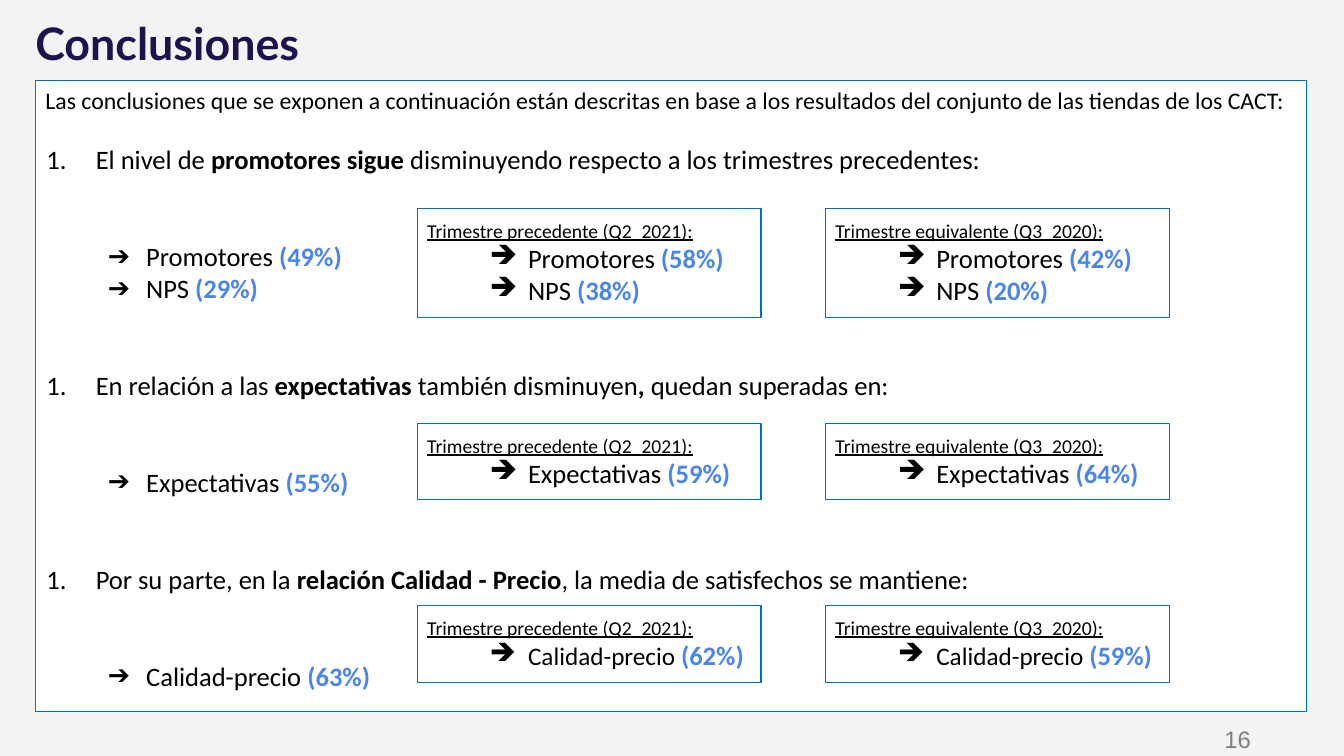
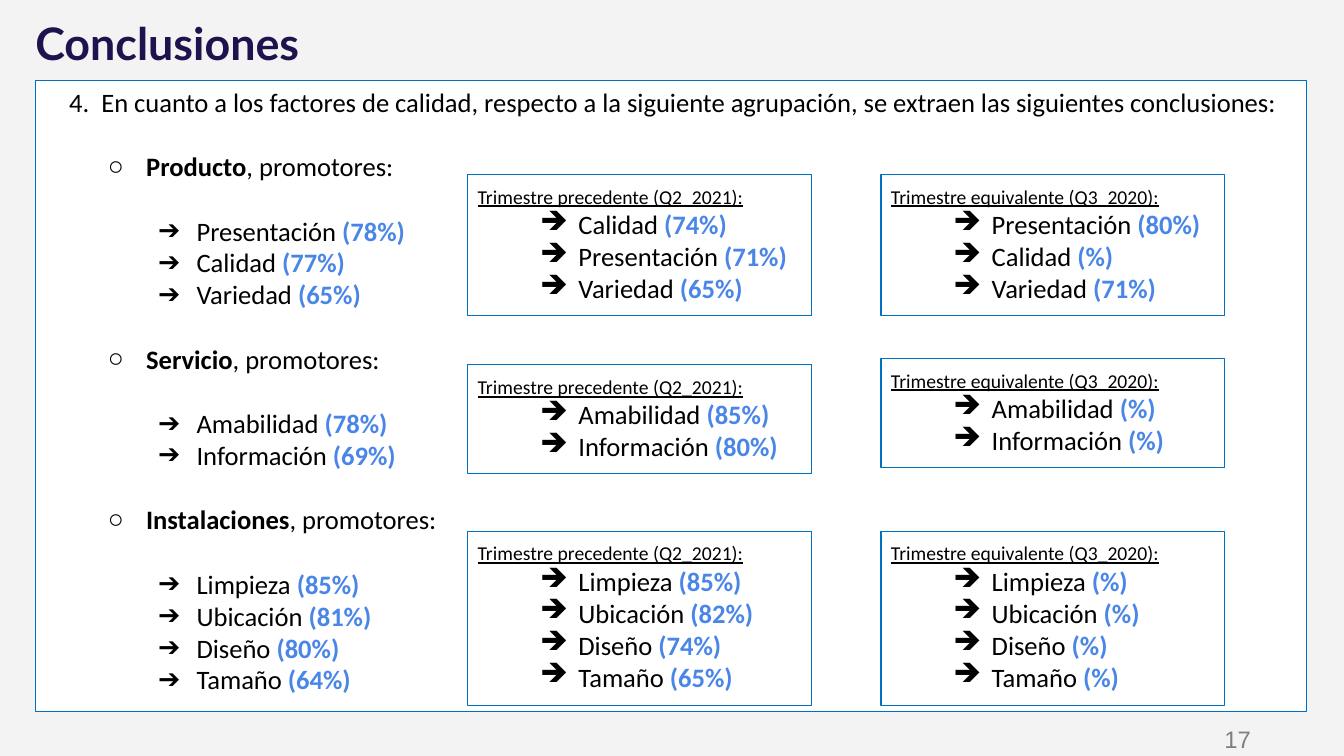
from dataclasses import dataclass
from typing import Any

from lxml import etree
from pptx import Presentation
from pptx.dml.color import RGBColor
from pptx.enum.shapes import MSO_SHAPE
from pptx.enum.text import MSO_ANCHOR as ANCHOR, MSO_AUTO_SIZE as FIT, PP_ALIGN as ALIGN
from pptx.oxml.ns import qn
from pptx.util import Pt

# Colours and shared measures, in points
PAPER = RGBColor(0xF3, 0xF3, 0xF3)
WHITE = RGBColor(0xFF, 0xFF, 0xFF)
BLACK = RGBColor(0x00, 0x00, 0x00)
NAVY = RGBColor(0x20, 0x12, 0x4D)
BORDER = RGBColor(0x00, 0x70, 0xC0)
VALUE_BLUE = RGBColor(0x4A, 0x86, 0xE8)
GREY = RGBColor(0x7F, 0x7F, 0x7F)

TITLE_BOX = (25.2, 0, 908, 60.5)
FRAME_BOX = (25.2, 57.6, 908, 450.5)
NUMBER_BOX = (678.2, 513.4, 224, 28.8)
CARD_WIDTH = 245.5
CARD_BASE = 31.5  # insets and heading
LINE = 23.2       # one line of list text

TITLE_FONT = {"name": "Lato", "size": Pt(32), "bold": True}
NUMBER_FONT = {"name": "Arial", "size": Pt(17)}
PREVIOUS = "Trimestre precedente (Q2_2021):"
EQUIVALENT = "Trimestre equivalente (Q3_2020):"


@dataclass(frozen=True)
class Style:
    size: float = 19
    margin: float = 0
    indent: float = 0
    bullet: str = ""
    start: int = 0
    level: int = 0
    underline: bool = False


@dataclass(frozen=True)
class Run:
    text: str
    bold: bool = False
    color: RGBColor = BLACK
    size: float = 0


@dataclass(frozen=True)
class Para:
    style: Style
    runs: list[Run]
    gap: float = 0


@dataclass(frozen=True)
class Metric:
    name: str
    value: str
    size: float = 0


@dataclass(frozen=True)
class Card:
    left: float
    top: float
    period: str
    metrics: list[Metric]


INTRO = Style(size=17)
POINT = Style(margin=36, indent=-35.3, start=1)
POINT_4 = Style(margin=40, indent=-23, start=4)
FACTOR = Style(margin=72, indent=-27.4, bullet="○", level=1)
ARROW = Style(margin=72, indent=-27.4, bullet="➔")
SUB_ARROW = Style(margin=108, indent=-27.4, bullet="➔", level=2)
PERIOD = Style(size=14, underline=True)


def set_font(font: Any, values: dict[str, Any], color: RGBColor) -> None:
    for name, value in values.items():
        setattr(font, name, value)
    font.color.rgb = color


def set_box(sp: Any, box: tuple[float, ...]) -> None:
    for name, value in zip(("left", "top", "width", "height"), box):
        setattr(sp, name, Pt(value))


def set_frame(tf: Any, inset_x: float, inset_y: float, anchor: Any, fit: Any = FIT.NONE) -> None:
    values = {"word_wrap": True, "auto_size": fit, "vertical_anchor": anchor,
              "margin_left": Pt(inset_x), "margin_right": Pt(inset_x),
              "margin_top": Pt(inset_y), "margin_bottom": Pt(inset_y)}
    for name, value in values.items():
        setattr(tf, name, value)


def set_outline(sp: Any) -> None:
    sp.fill.solid()
    sp.fill.fore_color.rgb = WHITE
    sp.line.color.rgb = BORDER
    sp.line.width = Pt(0.75)


def set_bullet(p: Any, style: Style) -> None:
    ppr = p._p.get_or_add_pPr()
    ppr.set("marL", str(Pt(style.margin)))
    ppr.set("indent", str(Pt(style.indent)))
    if not (style.bullet or style.start):
        etree.SubElement(ppr, qn("a:buNone"))
        return
    color = etree.SubElement(ppr, qn("a:buClr"))
    etree.SubElement(color, qn("a:srgbClr"), val=str(BLACK))
    if style.bullet:
        etree.SubElement(ppr, qn("a:buChar"), char=style.bullet)
    else:
        etree.SubElement(ppr, qn("a:buAutoNum"), type="arabicPeriod", startAt=str(style.start))


def write(tf: Any, paras: list[Para]) -> None:
    for i, para in enumerate(paras):
        p = tf.paragraphs[0] if i == 0 else tf.add_paragraph()
        style = para.style
        p.level = style.level
        p.alignment = ALIGN.LEFT if style.underline else ALIGN.JUSTIFY
        p.space_before = Pt(para.gap)
        set_bullet(p, style)
        for run in para.runs:
            r = p.add_run()
            r.text = run.text
            set_font(r.font, {"name": "Calibri", "size": Pt(run.size or style.size),
                              "bold": run.bold, "underline": style.underline}, run.color)


def metric_paras(metrics: list[Metric], style: Style, gap: float = 0) -> list[Para]:
    return [Para(style, [Run(f"{m.name} ", size=m.size),
                         Run(f"({m.value})", True, VALUE_BLUE)], 0 if i else gap)
            for i, m in enumerate(metrics)]


def point_paras(runs: list[Run], gap: float, metrics: list[Metric]) -> list[Para]:
    return [Para(POINT, runs, gap), *metric_paras(metrics, ARROW, 2 * LINE)]


def factor_paras(name: str, metrics: list[Metric]) -> list[Para]:
    heading = Para(FACTOR, [Run(name, True), Run(", promotores:")], LINE)
    return [heading, *metric_paras(metrics, SUB_ARROW, LINE)]


def draw_card(s: Any, card: Card) -> None:
    sp = s.shapes.add_shape(MSO_SHAPE.RECTANGLE, 0, 0, 0, 0)
    set_box(sp, (card.left, card.top, CARD_WIDTH, CARD_BASE + LINE * len(card.metrics)))
    sp.shadow.inherit = False
    set_outline(sp)
    set_frame(sp.text_frame, 7.2, 7.2, ANCHOR.TOP, FIT.SHAPE_TO_FIT_TEXT)
    write(sp.text_frame, [Para(PERIOD, [Run(card.period)]), *metric_paras(card.metrics, ARROW)])


def draw_slide(prs: Any, number: int, paras: list[Para], cards: list[Card]) -> None:
    s = prs.slides.add_slide(prs.slide_layouts[1])

    # Title
    title = s.shapes.title
    set_box(title, TITLE_BOX)
    set_frame(title.text_frame, 0, 0, ANCHOR.MIDDLE)
    p = title.text_frame.paragraphs[0]
    p.alignment = ALIGN.LEFT
    r = p.add_run()
    r.text = "Conclusiones"
    set_font(r.font, TITLE_FONT, NAVY)

    # Framed list
    body = s.placeholders[1]
    set_box(body, FRAME_BOX)
    set_outline(body)
    set_frame(body.text_frame, 7.2, 3.6, ANCHOR.TOP)
    write(body.text_frame, paras)

    # Slide number
    tb = s.shapes.add_textbox(0, 0, 0, 0)
    set_box(tb, NUMBER_BOX)
    set_frame(tb.text_frame, 8.64, 4.32, ANCHOR.MIDDLE)
    p = tb.text_frame.paragraphs[0]
    p.alignment = ALIGN.RIGHT
    r = p.add_run()
    r.text = str(number)
    set_font(r.font, NUMBER_FONT, GREY)

    # Comparison cards
    for card in cards:
        draw_card(s, card)


def trend_slide(prs: Any) -> None:
    paras = [
        Para(INTRO, [Run("Las conclusiones que se exponen a continuación están descritas en base "
                         "a los resultados del conjunto de las tiendas de los CACT:")]),
        *point_paras([Run("El nivel de "), Run("promotores sigue ", True),
                      Run("disminuyendo respecto a los trimestres precedentes:")],
                     20.7, [Metric("Promotores", "49%"), Metric("NPS", "29%")]),
        *point_paras([Run("En relación a las "), Run("expectativas ", True),
                      Run("también disminuyen"), Run(", ", True), Run("quedan superadas en:")],
                     2 * LINE, [Metric("Expectativas", "55%")]),
        *point_paras([Run("Por su parte, en la "), Run("relación Calidad - Precio", True),
                      Run(", la media de satisfechos se mantiene:")],
                     2 * LINE, [Metric("Calidad-precio", "63%")]),
    ]
    left, right = 298.1, 589.7
    cards = [
        Card(left, 149, PREVIOUS, [Metric("Promotores", "58%"), Metric("NPS", "38%")]),
        Card(right, 149, EQUIVALENT, [Metric("Promotores", "42%"), Metric("NPS", "20%")]),
        Card(left, 302.4, PREVIOUS, [Metric("Expectativas", "59%")]),
        Card(right, 302.4, EQUIVALENT, [Metric("Expectativas", "64%")]),
        Card(left, 432.6, PREVIOUS, [Metric("Calidad-precio", "62%", 18)]),
        Card(right, 432.6, EQUIVALENT, [Metric("Calidad-precio", "59%", 18)]),
    ]
    draw_slide(prs, 16, paras, cards)


def factors_slide(prs: Any) -> None:
    def metrics(names: str, values: str) -> list[Metric]:
        return [Metric(n, v) for n, v in zip(names.split(), values.split())]

    service = "Amabilidad Información"
    premises = "Limpieza Ubicación Diseño Tamaño"
    paras = [
        Para(POINT_4, [Run("En cuanto a los factores de calidad, respecto a la siguiente "
                           "agrupación, se extraen las siguientes conclusiones:")]),
        *factor_paras("Producto", metrics("Presentación Calidad Variedad", "78% 77% 65%")),
        *factor_paras("Servicio", metrics(service, "78% 69%")),
        *factor_paras("Instalaciones", metrics(premises, "85% 81% 80% 64%")),
    ]
    left, right = 334.1, 629.3
    cards = [
        Card(left, 124.6, PREVIOUS, metrics("Calidad Presentación Variedad", "74% 71% 65%")),
        Card(right, 124.6, EQUIVALENT, metrics("Presentación Calidad Variedad", "80% % 71%")),
        Card(left, 260.6, PREVIOUS, metrics(service, "85% 80%")),
        Card(right, 256.1, EQUIVALENT, metrics(service, "% %")),
        Card(left, 379.4, PREVIOUS, metrics(premises, "85% 82% 74% 65%")),
        Card(right, 379.4, EQUIVALENT, metrics(premises, "% % % %")),
    ]
    draw_slide(prs, 17, paras, cards)


def main() -> None:
    prs = Presentation()
    prs.slide_width, prs.slide_height = Pt(960), Pt(540)
    fill = prs.slide_master.background.fill
    fill.solid()
    fill.fore_color.rgb = PAPER
    trend_slide(prs)
    factors_slide(prs)
    prs.save("out.pptx")


if __name__ == "__main__":
    main()
